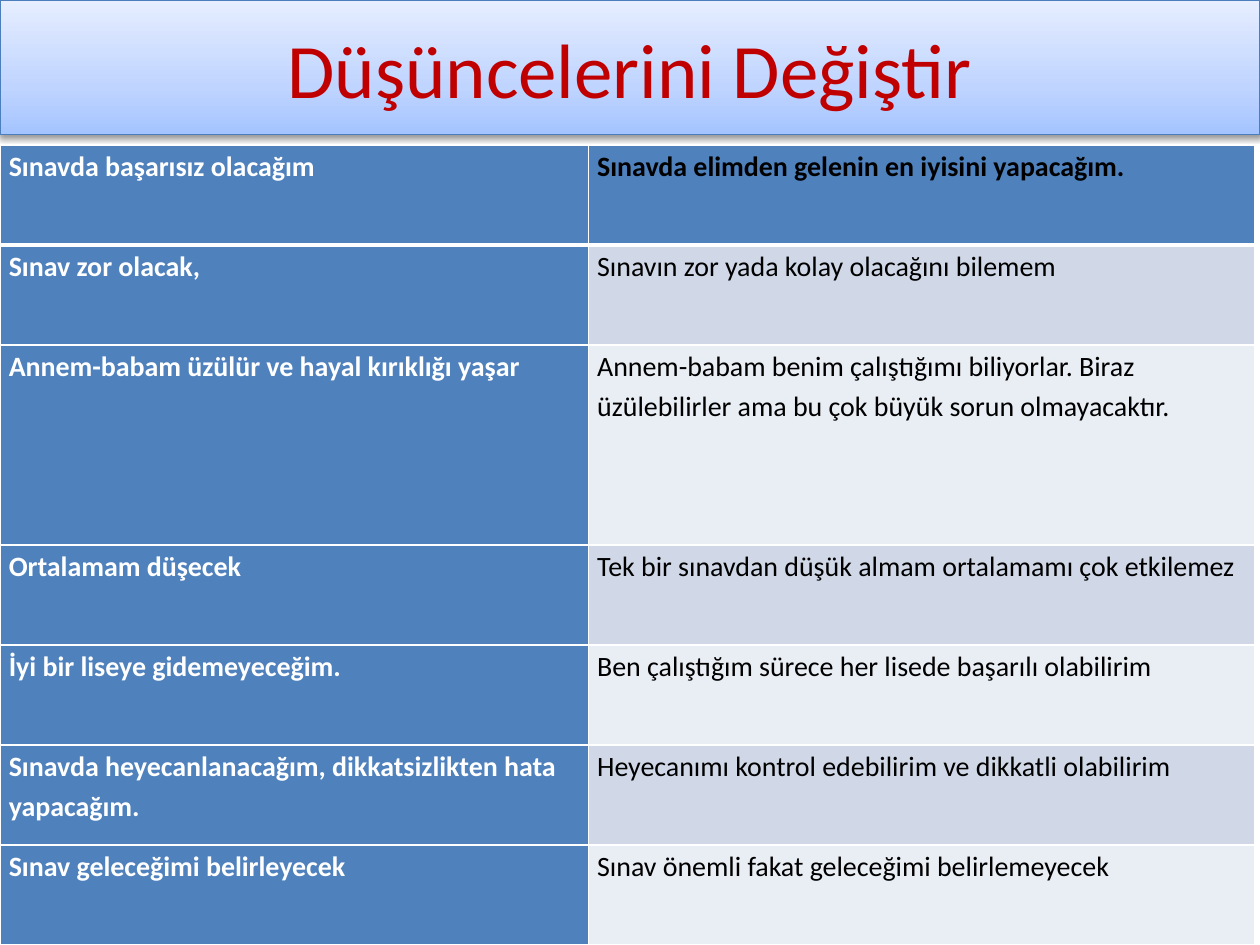
"""Build a slide that pairs exam worries with more helpful thoughts."""
from copy import deepcopy

from lxml import etree
from pptx import Presentation
from pptx import util as u
from pptx.dml.color import RGBColor
from pptx.enum import shapes, text
from pptx.oxml import ns

TITLE = "Düşüncelerini Değiştir"
THOUGHTS = [
    ("Sınavda başarısız olacağım", "Sınavda elimden gelenin en iyisini yapacağım."),
    ("Sınav zor olacak,", "Sınavın zor yada kolay olacağını bilemem"),
    ("Annem-babam üzülür ve hayal kırıklığı yaşar",
     "Annem-babam benim çalıştığımı biliyorlar. Biraz üzülebilirler ama bu çok büyük sorun olmayacaktır."),
    ("Ortalamam düşecek", "Tek bir sınavdan düşük almam ortalamamı çok etkilemez"),
    ("İyi bir liseye gidemeyeceğim.", "Ben çalıştığım sürece her lisede başarılı olabilirim"),
    ("Sınavda heyecanlanacağım, dikkatsizlikten hata yapacağım.",
     "Heyecanımı kontrol edebilirim ve dikkatli olabilirim"),
    ("Sınav geleceğimi belirleyecek", "Sınav önemli fakat geleceğimi belirlemeyecek"),
]
COLUMN_WIDTHS = (4.67, 5.29)
ROW_UNITS = (1, 1, 2, 1, 1, 1, 1)
TABLE_TOP, TABLE_HEIGHT = 1.15, 6.35

WHITE = RGBColor(0xFF, 0xFF, 0xFF)
BLACK = RGBColor(0x00, 0x00, 0x00)
RED = RGBColor(0xC0, 0x00, 0x00)
BLUE = RGBColor(0x4F, 0x81, 0xBD)
OUTLINE = RGBColor(0x4B, 0x7E, 0xBC)
BANDS = (RGBColor(0xE9, 0xED, 0xF4), RGBColor(0xD0, 0xD8, 0xE8))
GRADIENT = [
    (0, RGBColor(0xA4, 0xC4, 0xFF)),
    (0.35, RGBColor(0xBF, 0xD4, 0xFF)),
    (1, RGBColor(0xE6, 0xEE, 0xFF)),
]


def apply(target, values):
    """Set each named attribute on the target."""
    for name, value in values.items():
        setattr(target, name, value)


def add_element(parent, tag, **attributes):
    """Append a drawing element and return it."""
    return etree.SubElement(parent, ns.qn(tag), {key: str(value) for key, value in attributes.items()})


def write(para, words, size, color, bold):
    """Add one formatted span to a paragraph."""
    span = para.add_run()
    span.text = words
    apply(span.font, {"name": "Calibri", "size": u.Pt(size), "bold": bold})
    span.font.color.rgb = color


def add_title(page):
    """Draw the gradient title bar."""
    box = page.shapes.add_shape(shapes.MSO_SHAPE.RECTANGLE, 0, 0, u.Inches(10), u.Inches(1.07))
    box.fill.gradient()
    stop_list = box.element.spPr.find(".//" + ns.qn("a:gsLst"))
    stop_list.append(deepcopy(stop_list[-1]))
    for stop, (position, color) in zip(box.fill.gradient_stops, GRADIENT):
        stop.position = position
        stop.color.rgb = color
    box.fill.gradient_angle = 90
    box.line.color.rgb = OUTLINE
    box.line.width = u.Pt(0.75)
    box.shadow.inherit = False
    effects = box.element.spPr.find(ns.qn("a:effectLst"))
    shadow = add_element(effects, "a:outerShdw", blurRad=u.Pt(3.1), dist=u.Pt(1.6),
                         dir=5400000, rotWithShape=0)
    add_element(add_element(shadow, "a:srgbClr", val=BLACK), "a:alpha", val=38000)
    box.text_frame.vertical_anchor = text.MSO_ANCHOR.MIDDLE
    para = box.text_frame.paragraphs[0]
    para.alignment = text.PP_ALIGN.CENTER
    write(para, TITLE, 44, RED, False)


def add_borders(cell, row):
    """Draw white cell borders, thick beneath the first row."""
    widths = {"L": 1, "R": 1, "T": 3 if row == 1 else 1, "B": 3 if row == 0 else 1}
    properties = cell._tc.get_or_add_tcPr()
    for side, width in widths.items():
        line = add_element(properties, f"a:ln{side}", w=u.Pt(width))
        add_element(add_element(line, "a:solidFill"), "a:srgbClr", val=WHITE)


def add_thoughts(page):
    """Draw the two-column table of thoughts."""
    table = page.shapes.add_table(
        len(THOUGHTS), len(COLUMN_WIDTHS), 0, u.Inches(TABLE_TOP),
        u.Inches(sum(COLUMN_WIDTHS)), u.Inches(TABLE_HEIGHT)).table
    for column, width in zip(table.columns, COLUMN_WIDTHS):
        column.width = u.Inches(width)
    for row, units in zip(table.rows, ROW_UNITS):
        row.height = u.Inches(TABLE_HEIGHT * units / sum(ROW_UNITS))
    margins = {"margin_left": u.Inches(0.07), "margin_right": u.Inches(0.07),
               "margin_top": 0, "margin_bottom": 0}
    for row, pair in enumerate(THOUGHTS):
        for column, words in enumerate(pair):
            cell = table.cell(row, column)
            heading = row == 0 or column == 0
            apply(cell, margins)
            add_borders(cell, row)
            cell.fill.solid()
            cell.fill.fore_color.rgb = BLUE if heading else BANDS[row % 2]
            para = cell.text_frame.paragraphs[0]
            para.line_spacing = 1.15
            write(para, words, 16, BLACK if column else WHITE, heading)


def main():
    """Create and save the deck."""
    deck = Presentation()
    apply(deck, {"slide_width": u.Inches(10), "slide_height": u.Inches(7.5)})
    page = deck.slides.add_slide(deck.slide_layouts[6])
    add_title(page)
    add_thoughts(page)
    deck.save("out.pptx")


if __name__ == "__main__":
    main()
